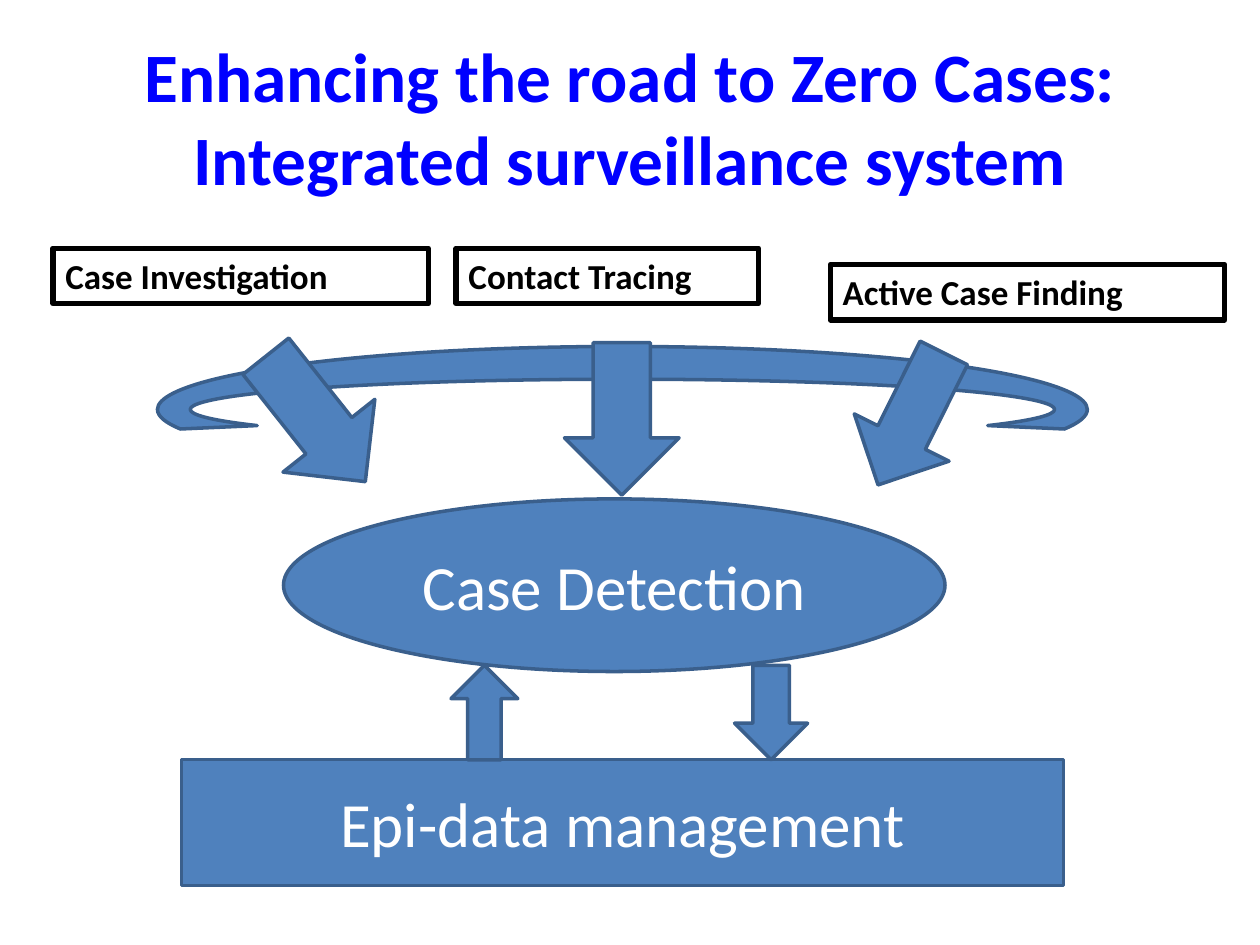
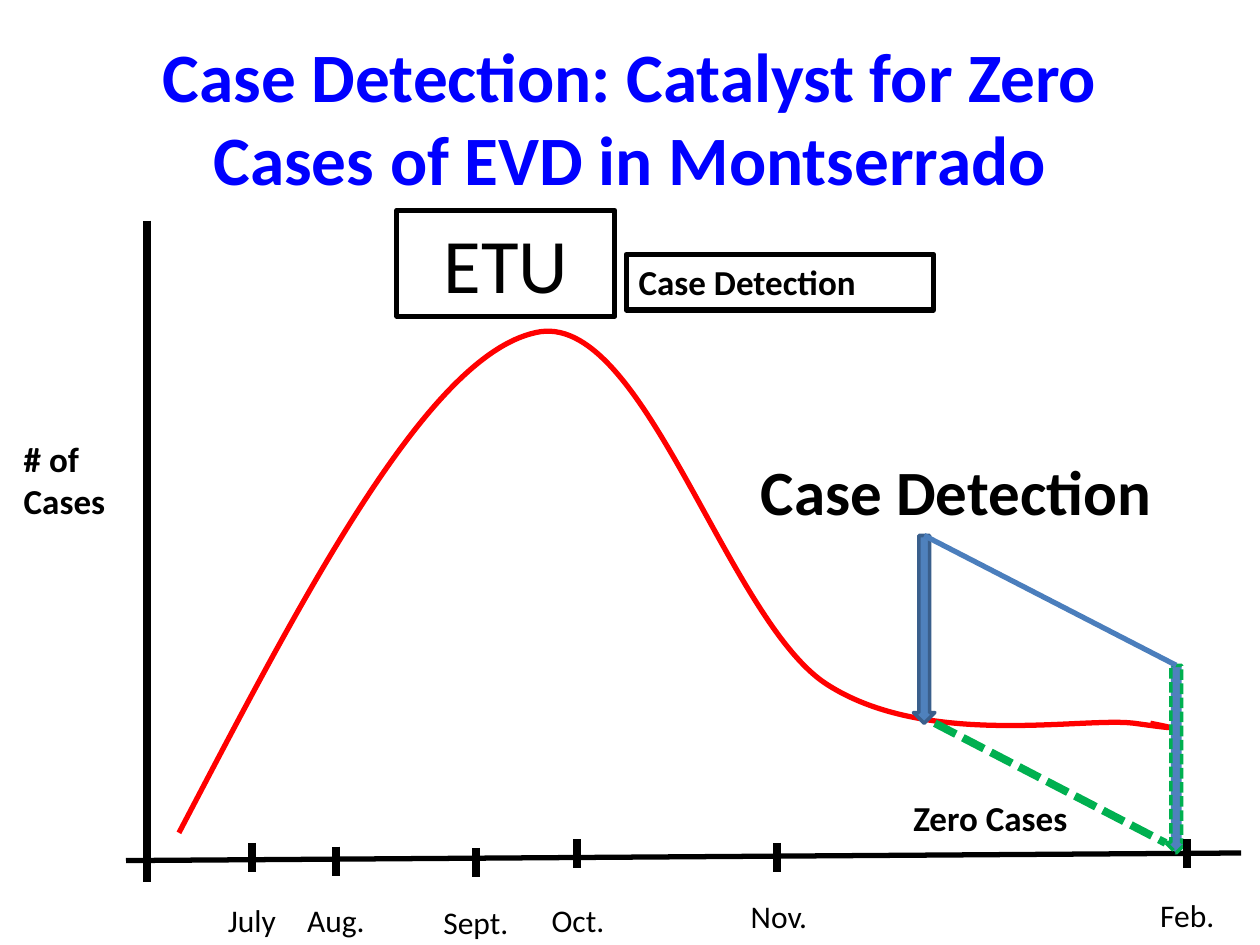
from dataclasses import dataclass

from lxml.etree import SubElement
from pptx import Presentation
from pptx.dml.color import RGBColor
from pptx.enum.dml import MSO_LINE
from pptx.enum.shapes import MSO_CONNECTOR, MSO_SHAPE
from pptx.enum.text import MSO_ANCHOR, MSO_AUTO_SIZE, PP_ALIGN
from pptx.oxml.ns import qn
from pptx.util import Inches, Pt

BLACK = RGBColor(0x00, 0x00, 0x00)
WHITE = RGBColor(0xFF, 0xFF, 0xFF)
TITLE_BLUE = RGBColor(0x00, 0x00, 0xFF)
FILL_BLUE = RGBColor(0x4F, 0x81, 0xBD)
EDGE_BLUE = RGBColor(0x3A, 0x5F, 0x8C)
LINK_BLUE = RGBColor(0x4B, 0x7E, 0xBC)
CURVE_RED = RGBColor(0xFF, 0x00, 0x00)
GOAL_GREEN = RGBColor(0x00, 0xB0, 0x50)
FONT = "Calibri"
TICK_LENGTH = 0.23


@dataclass(frozen=True)
class Area:
    left: float
    top: float
    width: float
    height: float

    def lengths(self) -> tuple:
        return tuple(Inches(n) for n in (self.left, self.top, self.width, self.height))


@dataclass(frozen=True)
class Block:
    kind: MSO_SHAPE
    area: Area
    rotation: float = 0
    text: str = ""
    adjustments: tuple = ()
    edge: RGBColor = EDGE_BLUE
    dash: MSO_LINE | None = None


@dataclass(frozen=True)
class Label:
    text: str
    area: Area
    size: float = 20
    bold: bool = True
    align: PP_ALIGN = PP_ALIGN.LEFT
    framed: bool = False
    wrap: bool = True


@dataclass(frozen=True)
class Month:
    name: str
    tick_x: float
    tick_top: float
    label: Area


TITLE_AREA = Area(0.5, 0.3, 9, 1.25)

SURVEILLANCE_BLOCKS = (
    Block(MSO_SHAPE.BLOCK_ARC, Area(1.25, 2.75, 7.38, 1), adjustments=(106.48, 1.52, 0.26)),
    Block(MSO_SHAPE.OVAL, Area(2.25, 3.96, 5.25, 1.37), text="Case Detection"),
    Block(MSO_SHAPE.DOWN_ARROW, Area(6.81, 2.74, 0.84, 1.17), rotation=26.5),
    Block(MSO_SHAPE.DOWN_ARROW, Area(2.04, 2.69, 0.93, 1.27), rotation=321.6),
    Block(MSO_SHAPE.DOWN_ARROW, Area(4.48, 2.72, 0.91, 1.21)),
)
ACTIVITIES = (
    Label("Case Investigation", Area(0.42, 1.97, 2.98, 0.44), framed=True),
    Label("Contact Tracing", Area(3.62, 1.97, 2.4, 0.44), framed=True),
    Label("Active Case Finding", Area(6.59, 2.1, 3.13, 0.44), framed=True),
)
DATA_BLOCKS = (
    Block(MSO_SHAPE.RECTANGLE, Area(1.44, 6.03, 7, 1), text="Epi-data management"),
    Block(MSO_SHAPE.DOWN_ARROW, Area(5.83, 5.28, 0.58, 0.75)),
    Block(MSO_SHAPE.RIGHT_ARROW, Area(3.47, 5.39, 0.75, 0.53), rotation=270),
)

DETECTION_ARROW = Block(MSO_SHAPE.DOWN_ARROW, Area(7.25, 4.25, 0.17, 1.49))
ZERO_ARROW = Block(MSO_SHAPE.DOWN_ARROW, Area(9.25, 5.28, 0.17, 1.49),
                   edge=GOAL_GREEN, dash=MSO_LINE.SQUARE_DOT)
CURVE_START = (1.42, 6.61)
CURVE_BENDS = (
    ((2.41, 4.72), (3.39, 2.83), (4.25, 2.64)),
    ((5.1, 2.44), (5.76, 4.91), (6.56, 5.43)),
    ((7.35, 5.94), (8.58, 5.69), (9, 5.74)),
    ((9.43, 5.8), (9.28, 5.77), (9.13, 5.74)),
)
TREATMENT_LABEL = Label("ETU", Area(3.15, 1.67, 1.73, 0.84), size=44, bold=False,
                        align=PP_ALIGN.CENTER, framed=True)
GOAL_LABELS = (
    Label("Case Detection", Area(5.94, 3.54, 3.85, 0.71), size=36),
    Label("Zero Cases", Area(7.15, 6.27, 1.44, 0.44), wrap=False),
)
MONTHS = (
    Month("July", 2, 6.69, Area(1.71, 7.1, 0.59, 0.4)),
    Month("Aug.", 2.67, 6.72, Area(2.34, 7.1, 0.66, 0.4)),
    Month("Sept.", 3.78, 6.73, Area(3.42, 7.12, 0.72, 0.4)),
    Month("Oct.", 4.58, 6.66, Area(4.28, 7.1, 0.62, 0.4)),
    Month("Nov.", 6.17, 6.69, Area(5.86, 7.07, 0.65, 0.4)),
    Month("Feb.", 9.42, 6.66, Area(9.11, 7.06, 0.64, 0.4)),
)
SIDE_LABELS = (
    Label("Case Detection", Area(4.97, 2.02, 2.44, 0.44), framed=True),
    Label("# of\nCases", Area(0.09, 3.42, 1.03, 0.77)),
)


def write_text(box, text: str, *, size: float, color: RGBColor = BLACK, bold: bool = False,
               align: PP_ALIGN = PP_ALIGN.LEFT, anchor: MSO_ANCHOR = MSO_ANCHOR.TOP,
               wrap: bool = True) -> None:
    frame = box.text_frame
    frame.word_wrap = wrap
    frame.vertical_anchor = anchor
    for index, words in enumerate(text.split("\n")):
        para = frame.add_paragraph() if index else frame.paragraphs[0]
        para.alignment = align
        span = para.add_run()
        span.text = words
        span.font.name = FONT
        span.font.size = Pt(size)
        span.font.bold = bold
        span.font.color.rgb = color


def style_line(line, color: RGBColor, width: float, dash: MSO_LINE | None = None) -> None:
    line.color.rgb = color
    line.width = Pt(width)
    if dash is not None:
        line.dash_style = dash


def add_title(page, text: str) -> None:
    box = page.shapes.add_textbox(*TITLE_AREA.lengths())
    write_text(box, text, size=39.6, color=TITLE_BLUE, bold=True,
               align=PP_ALIGN.CENTER, anchor=MSO_ANCHOR.MIDDLE)


def add_block(page, block: Block):
    shape = page.shapes.add_shape(block.kind, *block.area.lengths())
    shape.shadow.inherit = False
    shape.rotation = block.rotation
    for index, value in enumerate(block.adjustments):
        shape.adjustments[index] = value
    shape.fill.solid()
    shape.fill.fore_color.rgb = FILL_BLUE
    style_line(shape.line, block.edge, 2, block.dash)
    if block.text:
        write_text(shape, block.text, size=36, color=WHITE,
                   align=PP_ALIGN.CENTER, anchor=MSO_ANCHOR.MIDDLE)
    return shape


def add_label(page, label: Label) -> None:
    box = page.shapes.add_textbox(*label.area.lengths())
    if label.framed:
        style_line(box.line, BLACK, 3)
    write_text(box, label.text, size=label.size, bold=label.bold,
               align=label.align, wrap=label.wrap)
    box.text_frame.auto_size = MSO_AUTO_SIZE.SHAPE_TO_FIT_TEXT


def add_line(page, start: tuple, end: tuple, *, color: RGBColor = BLACK,
             width: float = 4.5, dash: MSO_LINE | None = None):
    ends = (Inches(n) for n in (*start, *end))
    line = page.shapes.add_connector(MSO_CONNECTOR.STRAIGHT, *ends)
    style_line(line.line, color, width, dash)
    SubElement(line._element.spPr, qn("a:effectLst"))
    return line


def add_case_curve(page) -> None:
    builder = page.shapes.build_freeform(*(Inches(n) for n in CURVE_START))
    builder.add_line_segments(
        [(Inches(x), Inches(y)) for *_, (x, y) in CURVE_BENDS], close=False)
    curve = builder.convert_to_shape()
    curve.shadow.inherit = False
    curve.fill.background()
    style_line(curve.line, CURVE_RED, 3)
    segments = list(curve._element.iter(qn("a:lnTo")))
    for segment, bend in zip(segments, CURVE_BENDS):
        segment.clear()
        segment.tag = qn("a:cubicBezTo")
        for x, y in bend:
            SubElement(segment, qn("a:pt"), x=str(Inches(x) - curve.left),
                       y=str(Inches(y) - curve.top))


def build_surveillance_page(page) -> None:
    add_title(page, "Enhancing the road to Zero Cases: Integrated surveillance system")
    for block in SURVEILLANCE_BLOCKS:
        add_block(page, block)
    for activity in ACTIVITIES:
        add_label(page, activity)
    for block in DATA_BLOCKS:
        add_block(page, block)


def build_detection_page(page) -> None:
    add_title(page, "Case Detection: Catalyst for Zero Cases of EVD in Montserrado")
    add_line(page, (1.17, 1.75), (1.17, 7))
    add_line(page, (1, 6.83), (9.85, 6.77), width=3)
    add_case_curve(page)
    add_label(page, TREATMENT_LABEL)
    detection_arrow = add_block(page, DETECTION_ARROW)
    zero_arrow = add_block(page, ZERO_ARROW)
    add_line(page, (7.42, 5.74), (9.25, 6.69), color=GOAL_GREEN, dash=MSO_LINE.SQUARE_DOT)
    link = add_line(page, (7.33, 4.25), (9.33, 5.28), color=LINK_BLUE, width=3)
    link.begin_connect(detection_arrow, 0)
    link.end_connect(zero_arrow, 0)
    for label in GOAL_LABELS:
        add_label(page, label)
    for month in MONTHS:
        add_line(page, (month.tick_x, month.tick_top),
                 (month.tick_x, month.tick_top + TICK_LENGTH))
    for month in MONTHS:
        add_label(page, Label(month.name, month.label, size=18, bold=False, wrap=False))
    for label in SIDE_LABELS:
        add_label(page, label)


def main() -> None:
    deck = Presentation()
    deck.slide_width = Inches(10)
    deck.slide_height = Inches(7.5)
    for build_page in (build_surveillance_page, build_detection_page):
        build_page(deck.slides.add_slide(deck.slide_layouts[6]))
    deck.save("out.pptx")


if __name__ == "__main__":
    main()
